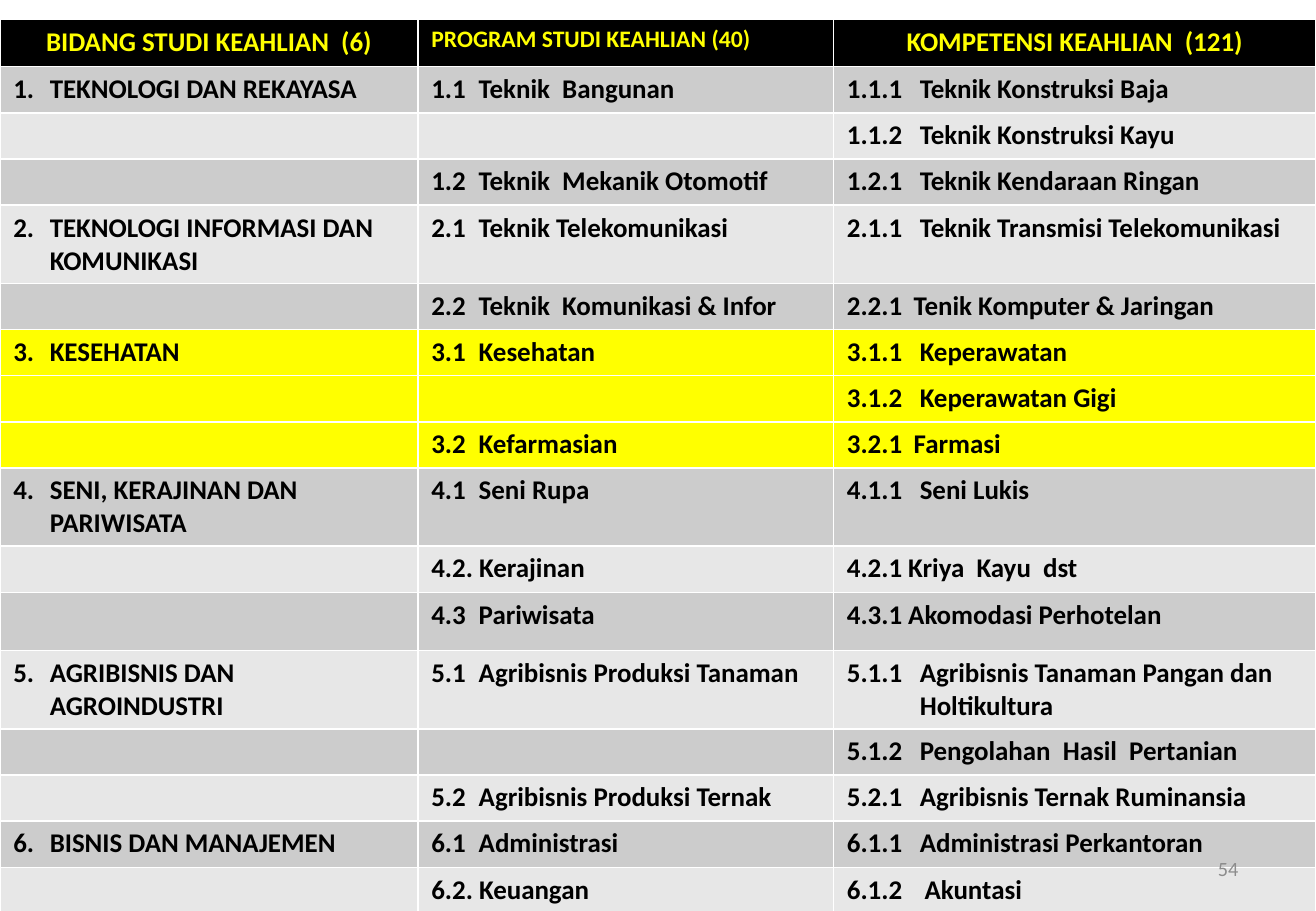
from dataclasses import dataclass

from lxml.etree import SubElement
from pptx import Presentation
from pptx.dml.color import RGBColor
from pptx.enum.text import MSO_ANCHOR, PP_ALIGN
from pptx.oxml.ns import qn
from pptx.util import Inches, Pt


@dataclass(frozen=True)
class Theme:
    font: str = "Calibri"
    header_fill: str = "000000"
    header_text: str = "FFFF00"
    body_text: str = "000000"
    bands: tuple = ("E7E7E7", "CCCCCC")
    highlight: str = "FFFF00"
    page_number: str = "8C8C8C"
    body_size: int = 16
    small_header_size: int = 14
    number_size: int = 12


THEME = Theme()
COLUMN_WIDTHS = (3.44, 3.42, 3.97)
HANGS = (0.3, 0.39, 0.6)
SPECIAL_HANGS = {"2.2.1": 0.55, "3.2.1": 0.55, "6.1.2": 0.64}
HEADER_HEIGHT, LINE_HEIGHT, TALL_HEIGHT, TWO_LINE_HEIGHT = 0.39, 0.38, 0.48, 0.63
HIGHLIGHTED_FIELD = "3."

HEADERS = (
    ("BIDANG STUDI KEAHLIAN  (6)", THEME.body_size, PP_ALIGN.CENTER),
    ("PROGRAM STUDI KEAHLIAN (40)", THEME.small_header_size, PP_ALIGN.LEFT),
    ("KOMPETENSI KEAHLIAN  (121)", THEME.body_size, PP_ALIGN.CENTER),
)
# Each row: field, programme, competence, row height
ROWS = (
    ("1.\tTEKNOLOGI DAN REKAYASA", "1.1\tTeknik  Bangunan", "1.1.1\tTeknik Konstruksi Baja", LINE_HEIGHT),
    ("", "", "1.1.2\tTeknik Konstruksi Kayu", LINE_HEIGHT),
    ("", "1.2\tTeknik  Mekanik Otomotif", "1.2.1\tTeknik Kendaraan Ringan", LINE_HEIGHT),
    ("2.\tTEKNOLOGI INFORMASI DAN KOMUNIKASI", "2.1\tTeknik Telekomunikasi",
     "2.1.1\tTeknik Transmisi Telekomunikasi", TWO_LINE_HEIGHT),
    ("", "2.2\tTeknik  Komunikasi & Infor", "2.2.1\tTenik Komputer & Jaringan", LINE_HEIGHT),
    ("3.\tKESEHATAN", "3.1\tKesehatan", "3.1.1\tKeperawatan", LINE_HEIGHT),
    ("", "", "3.1.2\tKeperawatan Gigi", LINE_HEIGHT),
    ("", "3.2\tKefarmasian", "3.2.1\tFarmasi", LINE_HEIGHT),
    ("4.\tSENI, KERAJINAN DAN PARIWISATA", "4.1\tSeni Rupa", "4.1.1\tSeni Lukis", TWO_LINE_HEIGHT),
    ("", "4.2. Kerajinan", "4.2.1 Kriya  Kayu  dst", LINE_HEIGHT),
    ("", "4.3\tPariwisata", "4.3.1 Akomodasi Perhotelan", TALL_HEIGHT),
    ("5.\tAGRIBISNIS DAN AGROINDUSTRI", "5.1\tAgribisnis Produksi Tanaman",
     "5.1.1\tAgribisnis Tanaman Pangan dan Holtikultura", TWO_LINE_HEIGHT),
    ("", "", "5.1.2\tPengolahan  Hasil  Pertanian", LINE_HEIGHT),
    ("", "5.2\tAgribisnis Produksi Ternak", "5.2.1\tAgribisnis Ternak Ruminansia", LINE_HEIGHT),
    ("6.\tBISNIS DAN MANAJEMEN", "6.1\tAdministrasi", "6.1.1\tAdministrasi Perkantoran", LINE_HEIGHT),
    ("", "6.2. Keuangan", "6.1.2\tAkuntasi", LINE_HEIGHT),
)


def add_span(para, text, size, color, bold=False):
    span = para.add_run()
    span.text = text
    span.font.name = THEME.font
    span.font.size = Pt(size)
    span.font.bold = bold
    span.font.color.rgb = RGBColor.from_string(color)


def set_hanging_indent(para, hang):
    properties = para._p.get_or_add_pPr()
    properties.set("marL", str(Inches(hang)))
    properties.set("indent", str(-Inches(hang)))


def prepare_cell(cell, fill):
    """Fill and pad a cell, and return its paragraph."""
    cell.fill.solid()
    cell.fill.fore_color.rgb = RGBColor.from_string(fill)
    cell.margin_left = cell.margin_right = Inches(0.11)
    cell.margin_top = cell.margin_bottom = Inches(0.05)
    return cell.text_frame.paragraphs[0]


def fill_body_cell(cell, text, fill, column_hang):
    para = prepare_cell(cell, fill)
    if not text:
        # An empty cell still needs the body size, or its row grows
        SubElement(para._p, qn("a:endParaRPr"), sz=str(THEME.body_size * 100))
        return
    if "\t" in text:
        code = text.split("\t")[0]
        set_hanging_indent(para, SPECIAL_HANGS.get(code, column_hang))
    add_span(para, text, THEME.body_size, THEME.body_text, bold=True)


def add_skills_table(page, left, top):
    heights = [HEADER_HEIGHT] + [row[-1] for row in ROWS]
    table = page.shapes.add_table(
        len(heights), len(COLUMN_WIDTHS), Inches(left), Inches(top),
        Inches(sum(COLUMN_WIDTHS)), Inches(sum(heights))).table
    for column, width in zip(table.columns, COLUMN_WIDTHS):
        column.width = Inches(width)
    for row, height in zip(table.rows, heights):
        row.height = Inches(height)

    for column, (text, size, alignment) in enumerate(HEADERS):
        para = prepare_cell(table.cell(0, column), THEME.header_fill)
        para.alignment = alignment
        add_span(para, text, size, THEME.header_text, bold=True)

    for index, (*texts, _) in enumerate(ROWS, start=1):
        highlighted = texts[-1].startswith(HIGHLIGHTED_FIELD)
        fill = THEME.highlight if highlighted else THEME.bands[index % 2]
        for column, (text, hang) in enumerate(zip(texts, HANGS)):
            fill_body_cell(table.cell(index, column), text, fill, hang)


def add_page_number(page, left, top, width, height):
    box = page.shapes.add_textbox(Inches(left), Inches(top), Inches(width), Inches(height))
    frame = box.text_frame
    frame.word_wrap = True
    frame.vertical_anchor = MSO_ANCHOR.MIDDLE
    para = frame.paragraphs[0]
    para.alignment = PP_ALIGN.RIGHT
    add_span(para, "54", THEME.number_size, THEME.page_number)


def main():
    deck = Presentation()
    deck.slide_width, deck.slide_height = Inches(10.83), Inches(7.5)
    page = deck.slides.add_slide(deck.slide_layouts[6])
    add_skills_table(page, 0, 0.16)
    add_page_number(page, 7.76, 6.95, 2.53, 0.4)
    deck.save("out.pptx")


if __name__ == "__main__":
    main()
